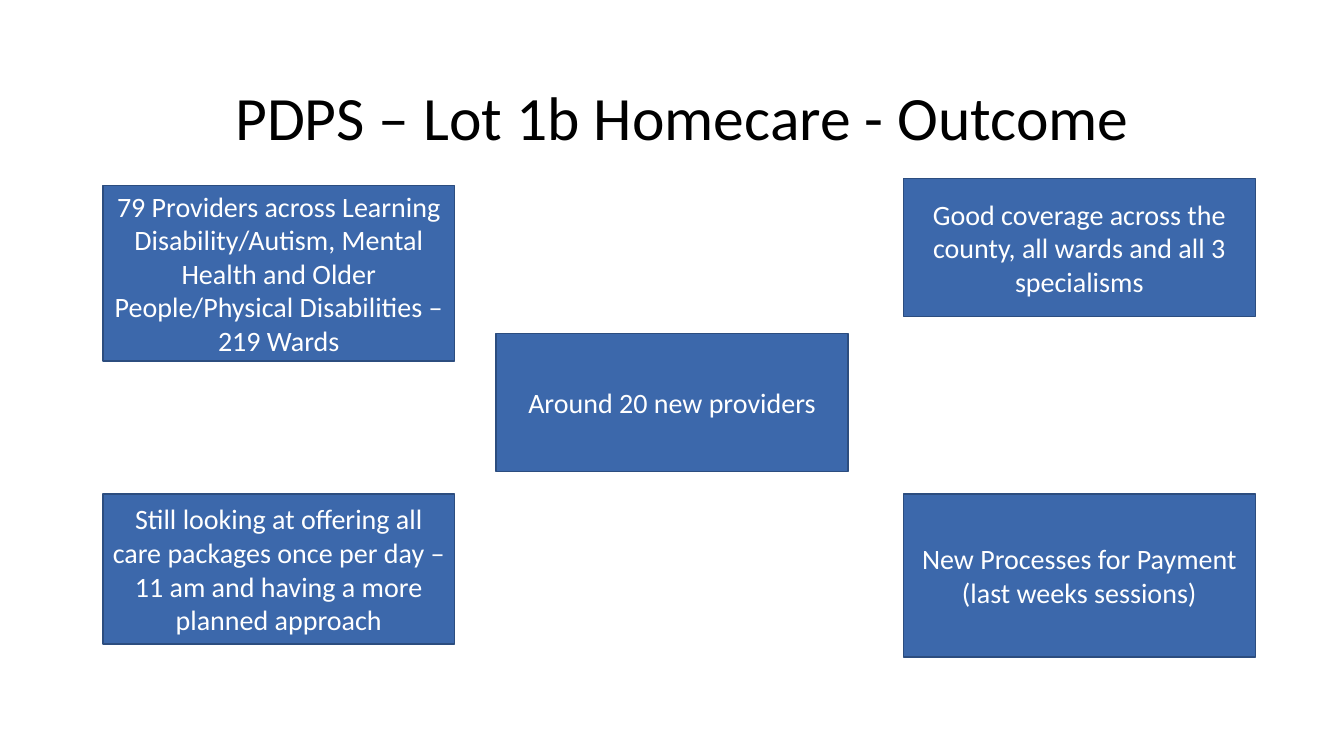
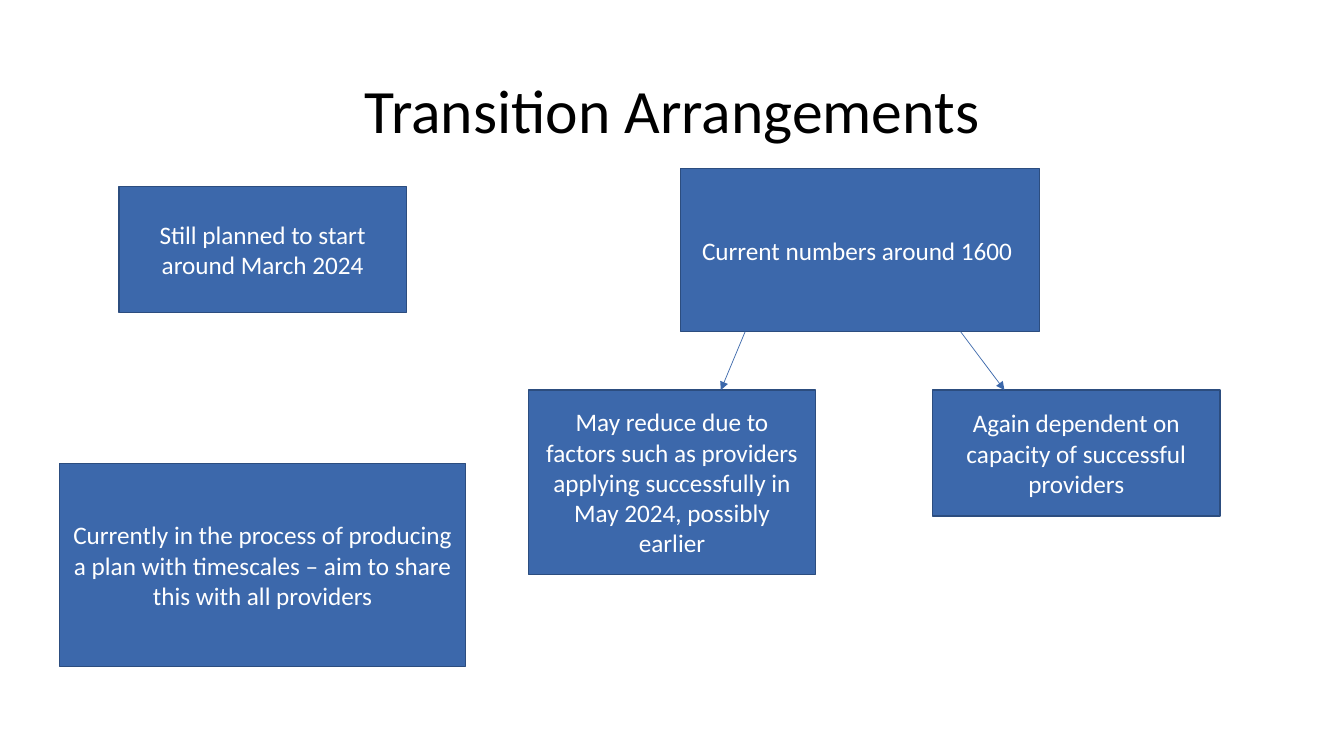
"""Build two slides on homecare outcomes and transition arrangements."""
from lxml.etree import SubElement
from pptx import Presentation
from pptx.dml.color import RGBColor
from pptx.enum.shapes import MSO_CONNECTOR as Connector, MSO_SHAPE as Shape
from pptx.enum.text import MSO_ANCHOR as Anchor, PP_ALIGN as Align
from pptx.oxml.ns import qn
from pptx.util import Inches, Pt

COLORS = {"box": "3C68AB", "edge": "2C4D7F", "title": "000000", "text": "FFFFFF"}
SLIDE_WIDTH, SLIDE_HEIGHT = 13.33, 7.5
TITLE_WIDTH, TITLE_HEIGHT = 11.5, 1.45
TITLE_FORMAT = {"name": "Calibri", "size": Pt(44)}

LEFT, MIDDLE, RIGHT = 1.02, 4.92, 8.96
OUTCOME_WIDTH, OUTCOME_HEIGHT, LOWER_ROW = 3.49, 1.37, 4.9
STEP_WIDTH, STEP_HEIGHT, BRANCH_ROW = 2.85, 1.25, 3.87

SLIDES = [
    {
        "title": "PDPS – Lot 1b Homecare - Outcome",
        "title_at": (1.02, 0.47),
        "text_size": 20,
        "boxes": {
            "payment": (RIGHT, LOWER_ROW, OUTCOME_WIDTH, 1.62,
                        "New Processes for Payment (last weeks sessions)"),
            "packages": (LEFT, LOWER_ROW, OUTCOME_WIDTH, 1.49,
                         "Still looking at offering all care packages once per day "
                         "– 11 am and having a more planned approach"),
            "coverage": (RIGHT, 1.77, OUTCOME_WIDTH, OUTCOME_HEIGHT,
                         "Good coverage across the county, all wards and all 3 specialisms"),
            "providers": (LEFT, 1.84, OUTCOME_WIDTH, 1.74,
                          "79 Providers across Learning Disability/Autism, Mental Health "
                          "and Older People/Physical Disabilities – 219 Wards"),
            "newcomers": (MIDDLE, 3.31, OUTCOME_WIDTH, OUTCOME_HEIGHT,
                          "Around 20 new providers"),
        },
        "arrows": [],
    },
    {
        "title": "Transition Arrangements",
        "title_at": (0.92, 0.4),
        "text_size": 18,
        "boxes": {
            "start": (1.18, 1.85, STEP_WIDTH, STEP_HEIGHT,
                      "Still planned to start around March 2024"),
            "numbers": (6.75, 1.67, 3.56, 1.62, "Current numbers around 1600 "),
            "capacity": (9.25, BRANCH_ROW, STEP_WIDTH, STEP_HEIGHT,
                         "Again dependent on capacity of successful providers"),
            "reduction": (5.24, BRANCH_ROW, STEP_WIDTH, 1.83,
                          "May reduce due to factors such as providers applying "
                          "successfully in May 2024, possibly earlier"),
            "plan": (0.59, 4.6, 4.03, 2.01,
                     "Currently in the process of producing a plan with timescales "
                     "– aim to share this with all providers"),
        },
        "arrows": [("numbers", 0.18, "reduction", 0.67),
                   ("numbers", 0.78, "capacity", 0.25)],
    },
]


def color(name):
    return RGBColor.from_string(COLORS[name])


def write(shape, text, font_format, color_name, line_spacing=1.0):
    frame = shape.text_frame
    frame.word_wrap = True
    frame.vertical_anchor = Anchor.MIDDLE
    paragraph = frame.paragraphs[0]
    paragraph.text = text
    paragraph.alignment = Align.CENTER
    paragraph.line_spacing = line_spacing
    for attribute, value in font_format.items():
        setattr(paragraph.font, attribute, value)
    paragraph.font.color.rgb = color(color_name)


def add_title(slide, text, position):
    title = slide.shapes.add_textbox(*map(Inches, (*position, TITLE_WIDTH, TITLE_HEIGHT)))
    write(title, text, TITLE_FORMAT, "title", 0.9)


def add_box(slide, bounds, text, size):
    box = slide.shapes.add_shape(Shape.RECTANGLE, *map(Inches, bounds))
    box.shadow.inherit = False
    box.fill.solid()
    box.fill.fore_color.rgb = color("box")
    box.line.color.rgb = color("edge")
    box.line.width = Pt(1)
    write(box, text, {"name": "Calibri", "size": Pt(size)}, "text")


def add_arrow(slide, source, source_share, target, target_share):
    left, top, width, height, _ = source
    target_left, target_top, target_width, *_ = target
    ends = (left + source_share * width, top + height,
            target_left + target_share * target_width, target_top)
    arrow = slide.shapes.add_connector(Connector.STRAIGHT, *map(Inches, ends))
    arrow.line.color.rgb = color("box")
    arrow.line.width = Pt(0.5)
    SubElement(arrow.line._get_or_add_ln(), qn("a:tailEnd"), type="triangle")
    SubElement(arrow._element.spPr, qn("a:effectLst"))


def main():
    deck = Presentation()
    deck.slide_width, deck.slide_height = Inches(SLIDE_WIDTH), Inches(SLIDE_HEIGHT)
    for content in SLIDES:
        slide = deck.slides.add_slide(deck.slide_layouts[6])
        add_title(slide, content["title"], content["title_at"])
        boxes = content["boxes"]
        for *bounds, text in boxes.values():
            add_box(slide, bounds, text, content["text_size"])
        for source, source_share, target, target_share in content["arrows"]:
            add_arrow(slide, boxes[source], source_share, boxes[target], target_share)
    deck.save("out.pptx")


if __name__ == "__main__":
    main()
